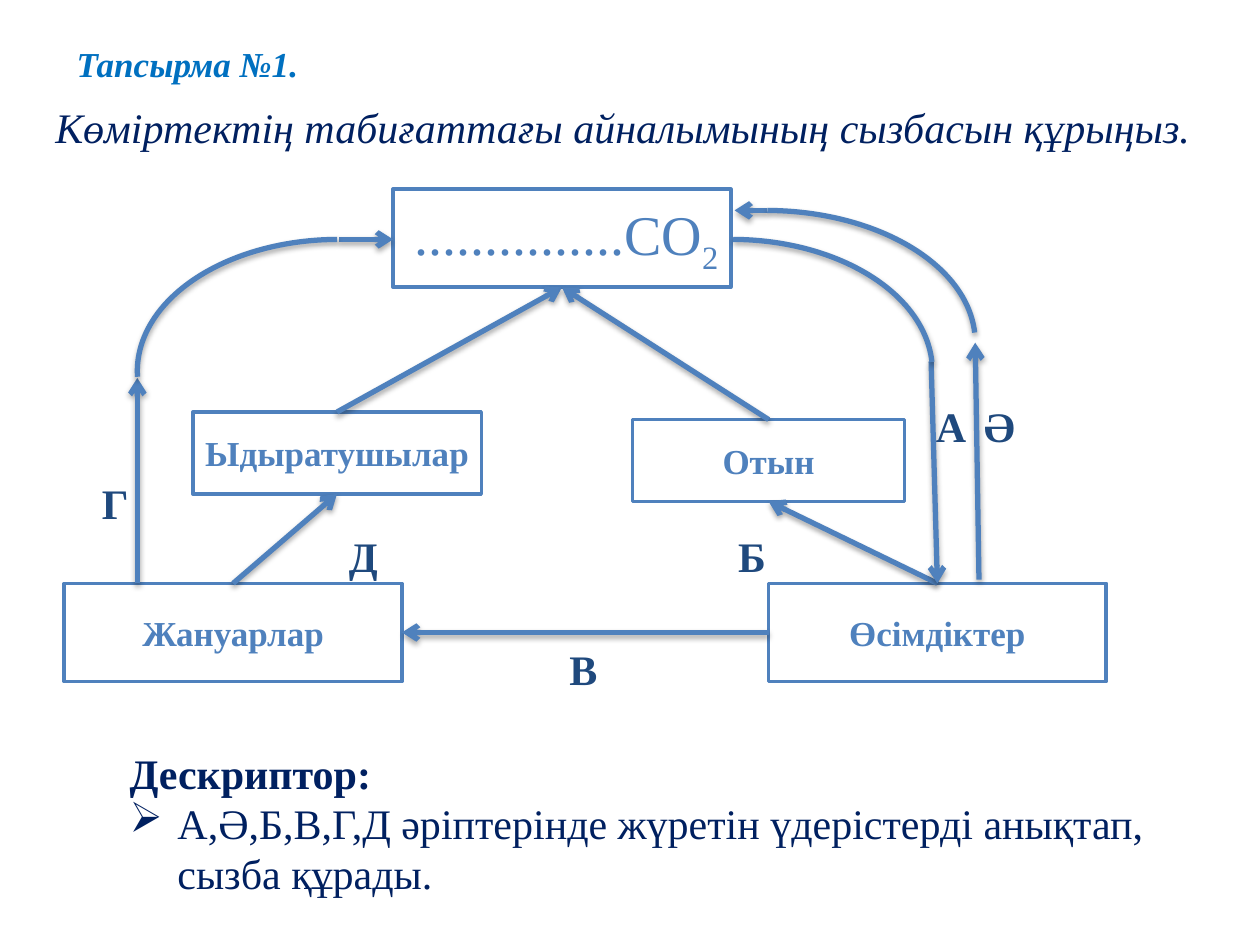
"""Build the carbon cycle task slide."""
from lxml import etree
from pptx import Presentation
from pptx.dml.color import RGBColor
from pptx.enum.shapes import MSO_CONNECTOR, MSO_SHAPE
from pptx.enum.text import MSO_ANCHOR, MSO_AUTO_SIZE, PP_ALIGN
from pptx.oxml.ns import qn
from pptx.util import Inches, Pt

RECT, ARC, STRAIGHT = MSO_SHAPE.RECTANGLE, MSO_SHAPE.ARC, MSO_CONNECTOR.STRAIGHT
CENTER, RIGHT, MIDDLE = PP_ALIGN.CENTER, PP_ALIGN.RIGHT, MSO_ANCHOR.MIDDLE
GROW = MSO_AUTO_SIZE.SHAPE_TO_FIT_TEXT
BLUE = RGBColor(0x4F, 0x81, 0xBD)
LABEL = RGBColor(0x1F, 0x49, 0x7D)
NAVY = RGBColor(0x00, 0x20, 0x60)
TITLE = RGBColor(0x00, 0x70, 0xC0)
WHITE = RGBColor(0xFF, 0xFF, 0xFF)
FONT = "Times New Roman"

BOXES = {
    "gas": ("...............СО", 3.12, 1.5, 2.68, 0.78),
    "plants": ("Өсімдіктер", 6.1, 4.63, 2.68, 0.78),
    "animals": ("Жануарлар", 0.51, 4.63, 2.68, 0.78),
    "fuel": ("Отын", 5.02, 3.33, 2.16, 0.65),
    "decomposers": ("Ыдыратушылар", 1.53, 3.27, 2.29, 0.65),
}
LINKS = [
    ("plants", "top", "fuel", "bottom"),
    ("plants", "left", "animals", "right"),
    ("animals", "top", "decomposers", "bottom"),
    ("decomposers", "top", "gas", "bottom"),
    ("fuel", "top", "gas", "bottom"),
]
ARROWS = [
    (1.09, 4.63, 1.09, 3),
    (2.69, 1.9, 3.12, 1.9),
    (7.39, 2.87, 7.44, 4.63),
    (6.09, 1.67, 5.83, 1.67),
    (7.77, 4.6, 7.74, 2.72),
]
ARCS = [
    (1.09, 1.9, 3.19, 2.09, 0.97, True),
    (4.22, 1.9, 3.18, 2.09, 214.43, False),
    (4.42, 1.67, 3.32, 2.09, 214.43, False),
]
LETTERS = [
    ("А", 7.33, 3.13, 0.41),
    ("Ә", 7.71, 3.13, 0.42),
    ("Б", 5.76, 4.16, 0.39),
    ("В", 4.42, 5.06, 0.39),
    ("Г", 0.71, 3.74, 0.38),
    ("Д", 2.67, 4.16, 0.4),
]
HEADING = "Тапсырма №1."
TASK = "Көміртектің табиғаттағы айналымының сызбасын құрыңыз."
CRITERIA = [
    "Дескриптор:",
    "А,Ә,Б,В,Г,Д әріптерінде жүретін үдерістерді анықтап, сызба құрады.",
]


def style(p, size, color, bold=False, italic=False):
    f = p.font
    f.name, f.size, f.bold, f.italic = FONT, Pt(size), bold, italic
    f.color.rgb = color


def add_text(s, lines, at, size, color, bold=False, italic=False, wrap=False):
    tf = s.shapes.add_textbox(*map(Inches, at)).text_frame
    tf.word_wrap, tf.auto_size = wrap, GROW
    tf.text = "\n".join(lines)
    for p in tf.paragraphs:
        style(p, size, color, bold, italic)
    return tf


def add_box(s, name):
    text, *at = BOXES[name]
    sp = s.shapes.add_shape(RECT, *map(Inches, at))
    sp.shadow.inherit = False
    sp.fill.solid()
    sp.fill.fore_color.rgb = WHITE
    sp.line.color.rgb, sp.line.width = BLUE, Pt(2)
    tf = sp.text_frame
    tf.vertical_anchor = MIDDLE
    p = tf.paragraphs[0]
    p.add_run().text = text
    if name == "gas":
        p.alignment = RIGHT
        style(p, 32, BLUE)
        r = p.add_run()
        r.text = "2"
        r._r.get_or_add_rPr().set("baseline", "-25000")
    else:
        p.alignment = CENTER
        style(p, 20, BLUE, bold=True)


def add_stroke(sp):
    sp.line.color.rgb, sp.line.width = BLUE, Pt(3)
    effects = etree.SubElement(sp.element.spPr, qn("a:effectLst"))
    shadow = etree.SubElement(effects, qn("a:outerShdw"), blurRad="40000",
                              dist="23000", dir="5400000", rotWithShape="0")
    color = etree.SubElement(shadow, qn("a:srgbClr"), val="000000")
    etree.SubElement(color, qn("a:alpha"), val="35000")


def add_arrow(s, ends):
    sp = s.shapes.add_connector(STRAIGHT, *map(Inches, ends))
    add_stroke(sp)
    etree.SubElement(sp.line._get_or_add_ln(), qn("a:tailEnd"), type="arrow")


def add_arc(s, x, y, w, h, end, flip):
    sp = s.shapes.add_shape(ARC, *map(Inches, (x, y, w, h)))
    sp.adjustments[0], sp.adjustments[1] = 162.31, end
    sp.fill.background()
    add_stroke(sp)
    if flip:
        sp.element.spPr.xfrm.set("flipH", "1")


def side(name, edge):
    _, x, y, w, h = BOXES[name]
    return {
        "top": (x + w / 2, y),
        "bottom": (x + w / 2, y + h),
        "left": (x, y + h / 2),
        "right": (x + w, y + h / 2),
    }[edge]


def main():
    prs = Presentation()
    prs.slide_width, prs.slide_height = Inches(10), Inches(7.5)
    s = prs.slides.add_slide(prs.slide_layouts[6])
    add_text(s, [HEADING], (0.51, 0.29, 2.04, 0.44), 20, TITLE, bold=True, italic=True)
    for name in BOXES:
        add_box(s, name)
    for start, start_edge, end, end_edge in LINKS:
        add_arrow(s, side(start, start_edge) + side(end, end_edge))
    for ends in ARROWS:
        add_arrow(s, ends)
    for arc in ARCS:
        add_arc(s, *arc)
    for letter, x, y, w in LETTERS:
        add_text(s, [letter], (x, y, w, 0.42), 24, LABEL, bold=True)
    add_text(s, [TASK], (0.34, 0.76, 9.31, 0.5), 24, NAVY, italic=True, wrap=True)
    tf = add_text(s, CRITERIA, (0.93, 5.88, 8.72, 1.31), 24, NAVY, wrap=True)
    head, item = tf.paragraphs
    head.font.bold = True
    pPr = item._p.get_or_add_pPr()
    pPr.set("marL", str(Inches(0.38)))
    pPr.set("indent", str(Inches(-0.38)))
    pPr.insert(0, pPr.makeelement(qn("a:buChar"), {"char": "➢"}))
    prs.save("out.pptx")


if __name__ == "__main__":
    main()
